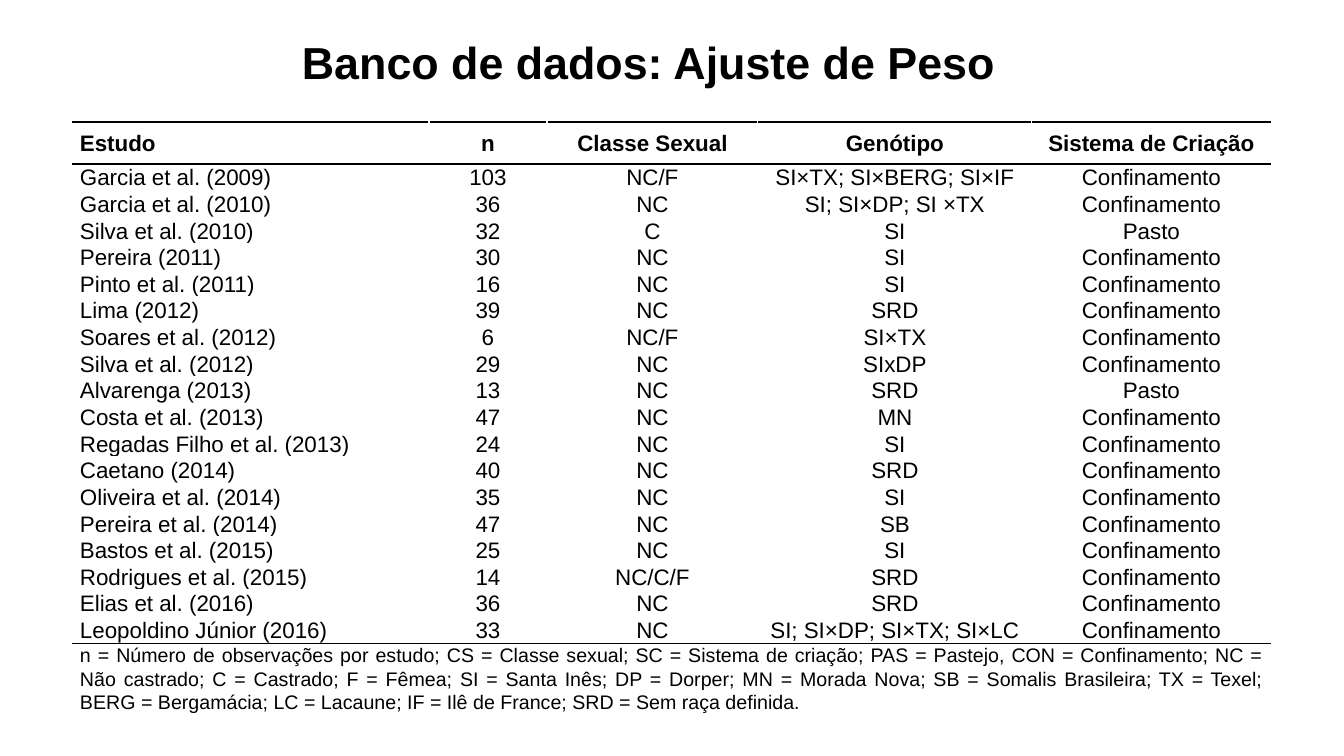
from lxml import etree
from pptx import Presentation
from pptx import util as u
from pptx.dml.color import RGBColor
from pptx.enum import text
from pptx.oxml.ns import qn

SCALE = 12192000 / 1344
BLACK = "000000"
LEFT, MID, FULL = (text.PP_ALIGN.LEFT, text.PP_ALIGN.CENTER,
                   text.PP_ALIGN.JUSTIFY)

TITLE = "Banco de dados: Ajuste de Peso"
HEAD = ["Estudo", "n", "Classe Sexual", "Genótipo", "Sistema de Criação"]
PEN, PASTURE = "Confinamento", "Pasto"
STUDIES = [
    ("Garcia et al. (2009)", "103", "NC/F", "SI×TX; SI×BERG; SI×IF", PEN),
    ("Garcia et al. (2010)", "36", "NC", "SI; SI×DP; SI ×TX", PEN),
    ("Silva et al. (2010)", "32", "C", "SI", PASTURE),
    ("Pereira (2011)", "30", "NC", "SI", PEN),
    ("Pinto et al. (2011)", "16", "NC", "SI", PEN),
    ("Lima (2012)", "39", "NC", "SRD", PEN),
    ("Soares et al. (2012)", "6", "NC/F", "SI×TX", PEN),
    ("Silva et al. (2012)", "29", "NC", "SIxDP", PEN),
    ("Alvarenga (2013)", "13", "NC", "SRD", PASTURE),
    ("Costa et al. (2013)", "47", "NC", "MN", PEN),
    ("Regadas Filho et al. (2013)", "24", "NC", "SI", PEN),
    ("Caetano (2014)", "40", "NC", "SRD", PEN),
    ("Oliveira et al. (2014)", "35", "NC", "SI", PEN),
    ("Pereira et al. (2014)", "47", "NC", "SB", PEN),
    ("Bastos et al. (2015)", "25", "NC", "SI", PEN),
    ("Rodrigues et al. (2015)", "14", "NC/C/F", "SRD", PEN),
    ("Elias et al. (2016)", "36", "NC", "SRD", PEN),
    ("Leopoldino Júnior (2016)", "33", "NC", "SI; SI×DP; SI×TX; SI×LC", PEN),
]
NOTE = (
    "n = Número de observações por estudo; CS = Classe sexual; "
    "SC = Sistema de criação; PAS = Pastejo, CON = Confinamento; "
    "NC = Não castrado; C = Castrado; F = Fêmea; SI = Santa Inês; "
    "DP = Dorper; MN = Morada Nova; SB = Somalis Brasileira; TX = Texel; "
    "BERG = Bergamácia; LC = Lacaune; IF = Ilê de France; "
    "SRD = Sem raça definida."
)
COLS = [356, 118, 211, 274, 239]


def px(n):
    return u.Emu(round(n * SCALE))


def color(code):
    return RGBColor.from_string(code)


def assign(item, values):
    for name, value in values.items():
        setattr(item, name, value)


def write(frame, words, size, align, bold=False):
    para = frame.paragraphs[0]
    assign(para, {"alignment": align, "line_spacing": 1.07,
                  "space_after": u.Pt(8)})
    run = para.add_run()
    run.text = words
    assign(run.font, {"size": u.Pt(size), "name": "Arial", "bold": bold})
    run.font.color.rgb = color(BLACK)


def rule(cell, side):
    """Draw one border of a cell; side is T or B."""
    line = etree.SubElement(cell._tc.get_or_add_tcPr(), qn("a:ln" + side),
                            w=str(u.Pt(1)))
    fill = etree.SubElement(line, qn("a:solidFill"))
    etree.SubElement(fill, qn("a:srgbClr"), val=BLACK)


def title(slide, x, y, w, h):
    box = slide.shapes.add_textbox(px(x), px(y), px(w), px(h))
    box.text_frame.word_wrap = True
    box.text_frame.auto_size = text.MSO_AUTO_SIZE.SHAPE_TO_FIT_TEXT
    write(box.text_frame, TITLE, 32, FULL, True)


def grid(slide, x, y, w, h):
    heights = [30, 42] + [21] * len(STUDIES) + [30]
    last = len(heights) - 1
    table = slide.shapes.add_table(len(heights), len(COLS), px(x), px(y),
                                   px(w), px(h)).table
    assign(table, {"first_row": False, "horz_banding": False})
    for col, width in zip(table.columns, COLS):
        col.width = px(width)
    for row, height in zip(table.rows, heights):
        row.height = px(height)

    tops, bottoms = {1, 2, last}, {0, 1, last - 1}
    for r, row in enumerate(table.rows):
        for cell in row.cells:
            assign(cell, {"margin_left": px(7), "margin_right": px(7),
                          "margin_top": 0, "margin_bottom": 0,
                          "vertical_anchor": text.MSO_ANCHOR.MIDDLE})
            for side, ruled in (("T", tops), ("B", bottoms)):
                if r in ruled:
                    rule(cell, side)
            cell.fill.background()

    for r, words in enumerate([HEAD] + STUDIES, 1):
        for c, word in enumerate(words):
            write(table.cell(r, c).text_frame, word, 16,
                  MID if c else LEFT, r == 1)
    for r in (0, last):
        table.cell(r, 0).merge(table.cell(r, len(COLS) - 1))
    for cell in table.rows[0].cells:
        cell.text_frame.paragraphs[0].font.size = u.Pt(16)
    write(table.cell(last, 0).text_frame, NOTE, 14, FULL)


def main():
    deck = Presentation()
    assign(deck, {"slide_width": px(1344), "slide_height": px(756)})
    slide = deck.slides.add_slide(deck.slide_layouts[6])
    grid(slide, 73, 92, sum(COLS), 480)
    title(slide, 292, 26, 758, 66)
    deck.save("out.pptx")


if __name__ == "__main__":
    main()
